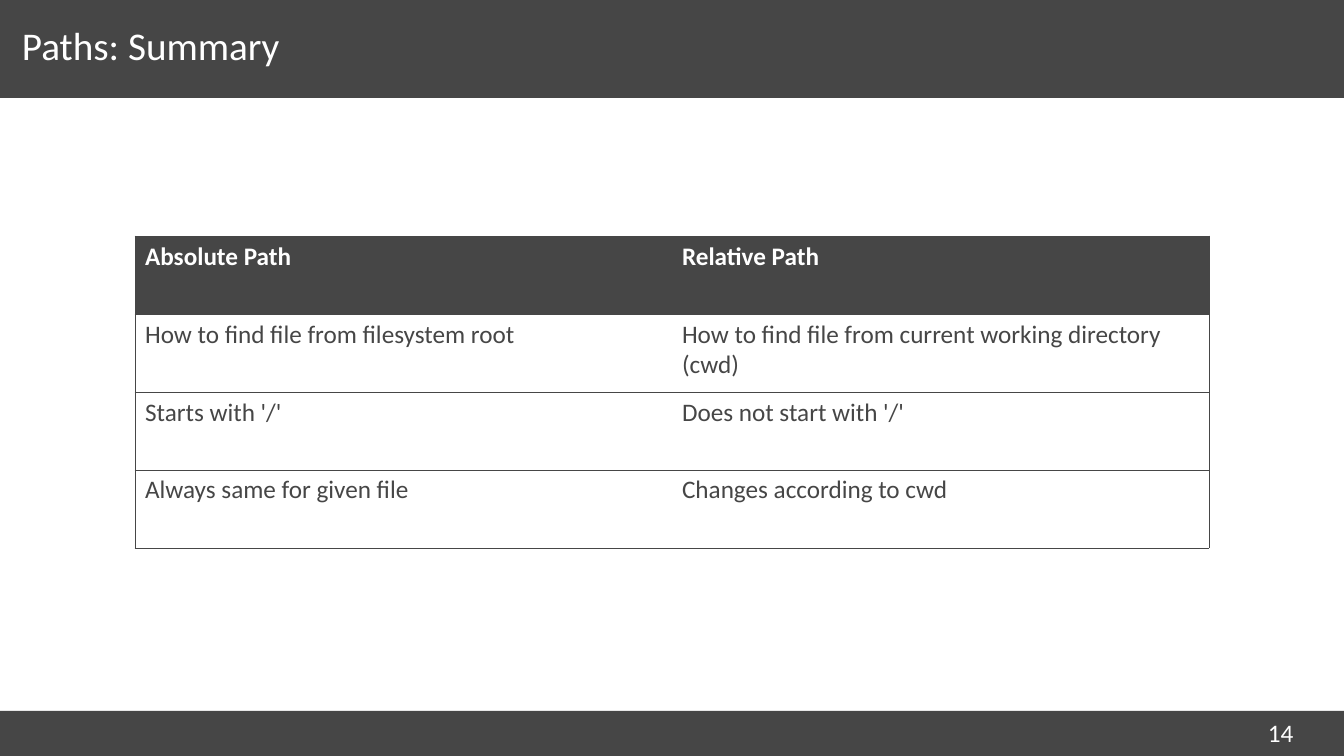
from lxml import etree
from pptx import Presentation, util as u
from pptx.dml.color import RGBColor
from pptx.enum import shapes, text
from pptx.oxml import ns

DARK = RGBColor(0x46, 0x46, 0x46)
WHITE = RGBColor(0xFF, 0xFF, 0xFF)
WIDE, HIGH = 1344, 756
SCALE = 9071.43
ROWS = [
    ("Absolute Path", "Relative Path"),
    ("How to find file from filesystem root",
     "How to find file from current working directory (cwd)"),
    ("Starts with '/'", "Does not start with '/'"),
    ("Always same for given file", "Changes according to cwd"),
]


def px(*vals):
    """Turn pixel lengths into EMU."""
    return [u.Emu(round(v * SCALE)) for v in vals]


class Deck:
    """Hold the style and the current slide."""

    def __init__(self):
        """Open a deck with one title-only slide."""
        self.prs = Presentation()
        self.prs.slide_width, self.prs.slide_height = px(WIDE, HIGH)
        self.slide = self.prs.slides.add_slide(self.prs.slide_layouts[5])
        self.shapes = self.slide.shapes
        self.style = {"name": "Calibri", "size": u.Pt(18), "bold": False}

    def letter(self, frame, words, color, **extra):
        """Put formatted words into a text frame."""
        frame.text = words
        para = frame.paragraphs[0]
        para.alignment = text.PP_ALIGN.LEFT
        font = para.runs[0].font
        for key, val in {**self.style, **extra}.items():
            setattr(font, key, val)
        font.color.rgb = color
        return para

    def bar(self, top, high):
        """Draw a full-width dark bar."""
        bar = self.shapes.add_shape(
            shapes.MSO_SHAPE.RECTANGLE, *px(0, top, WIDE, high))
        bar.shadow.inherit = False
        bar.fill.solid()
        bar.fill.fore_color.rgb = DARK
        bar.line.fill.background()

    def title(self, words, *box):
        """Fill the title and lift it above the bars."""
        title = self.shapes.title
        title.left, title.top, title.width, title.height = px(*box)
        frame = title.text_frame
        form = {"margin_left": 0, "margin_right": 0, "word_wrap": True,
                "auto_size": text.MSO_AUTO_SIZE.NONE,
                "vertical_anchor": text.MSO_ANCHOR.MIDDLE}
        for key, val in form.items():
            setattr(frame, key, val)
        para = self.letter(frame, words, WHITE, size=u.Pt(28))
        para.line_spacing = 0.8
        title.element.getparent().append(title.element)

    def label(self, words, *box):
        """Add a white text box."""
        frame = self.shapes.add_textbox(*px(*box)).text_frame
        frame.word_wrap = True
        self.letter(frame, words, WHITE)

    def edge(self, cell, sides):
        """Draw the named cell sides and clear the others."""
        props = cell._tc.get_or_add_tcPr()
        for spot, side in enumerate("LRTB"):
            line = etree.Element(ns.qn(f"a:ln{side}"), w=str(u.Pt(0.5)))
            if side in sides:
                fill = etree.SubElement(line, ns.qn("a:solidFill"))
                etree.SubElement(fill, ns.qn("a:srgbClr"), val=str(DARK))
            else:
                etree.SubElement(line, ns.qn("a:noFill"))
            props.insert(spot, line)

    def table(self, rows, left, top, wide, step):
        """Add a ruled table with a dark head row."""
        cols = len(rows[0])
        grid = self.shapes.add_table(
            len(rows), cols, *px(left, top, wide, step * len(rows))).table
        grid.horz_banding = False
        for r, row in enumerate(rows):
            for c, words in enumerate(row):
                cell = grid.cell(r, c)
                head = r == 0
                self.letter(cell.text_frame, words,
                            WHITE if head else DARK, bold=head)
                cell.fill.solid()
                cell.fill.fore_color.rgb = DARK if head else WHITE
                ends = ("L" if c == 0 else "") + ("R" if c == cols - 1 else "")
                self.edge(cell, "TB" + ends)


def main():
    """Build and save the slide."""
    deck = Deck()
    deck.bar(711, HIGH - 711)
    deck.bar(0, 98)
    deck.label("14", 1258, 712, 71, 25)
    deck.title("Paths: Summary", 22, 17, 1161, 65)
    deck.table(ROWS, 135, 236, 1074, 78)
    deck.prs.save("out.pptx")


if __name__ == "__main__":
    main()
